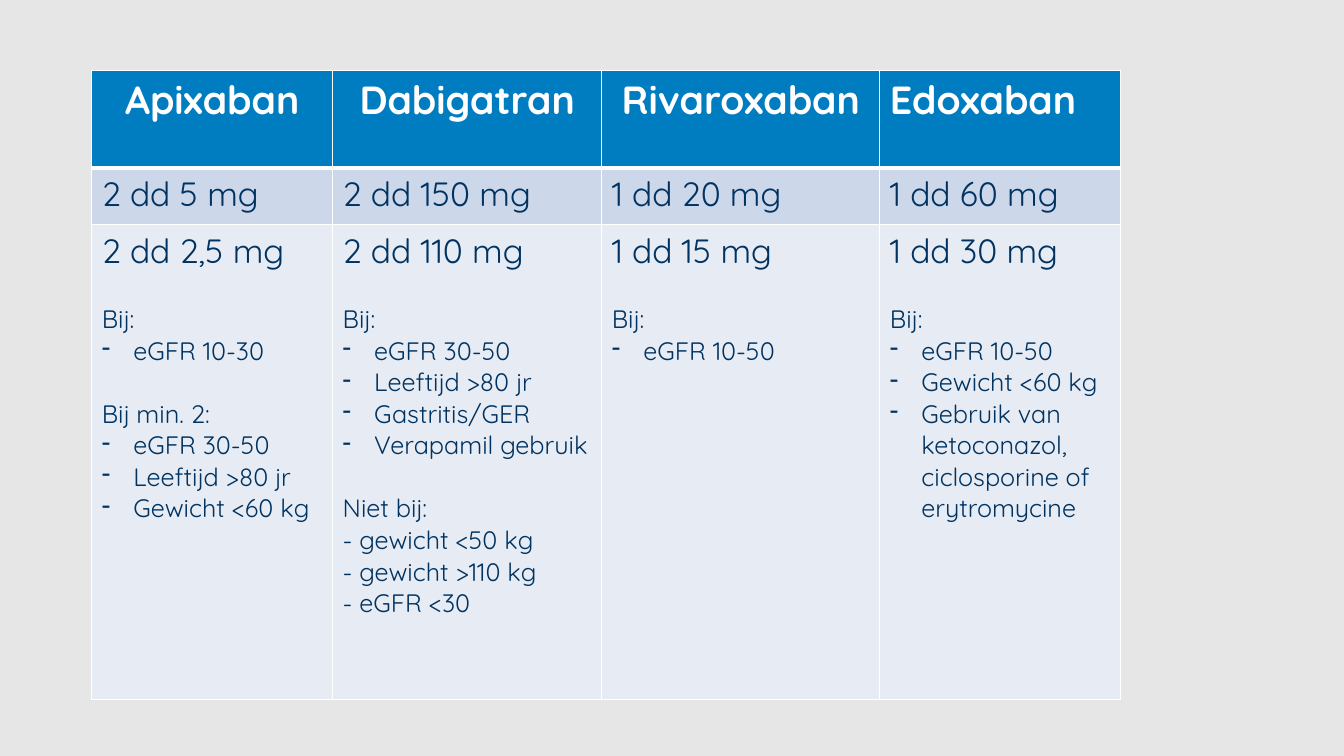
from dataclasses import dataclass

from lxml.etree import SubElement
from pptx import Presentation
from pptx.dml.color import RGBColor as Color
from pptx.enum.text import PP_ALIGN as Align
from pptx.oxml.ns import qn
from pptx.util import Pt

# name, alignment, column width, standard dose, reduced dose, (heading, bullets, plain lines)
DRUGS = [
    ("Apixaban", Align.CENTER, 172.1, "2 dd 5 mg", "2 dd 2,5 mg", [
        ("Bij:", ["eGFR 10-30"], []),
        ("Bij min. 2:", ["eGFR 30-50", "Leeftijd >80 jr", "Gewicht <60 kg"], []),
    ]),
    ("Dabigatran", Align.CENTER, 192.2, "2 dd 150 mg", "2 dd 110 mg", [
        ("Bij:", ["eGFR 30-50", "Leeftijd >80 jr", "Gastritis/GER", "Verapamil gebruik"], []),
        ("Niet bij:", [], ["- gewicht <50 kg", "- gewicht >110 kg", "- eGFR <30"]),
    ]),
    ("Rivaroxaban", Align.CENTER, 198.7, "1 dd 20 mg", "1 dd 15 mg", [
        ("Bij:", ["eGFR 10-50"], []),
    ]),
    ("Edoxaban", Align.LEFT, 172.1, "1 dd 60 mg", "1 dd 30 mg", [
        ("Bij:", ["eGFR 10-50", "Gewicht <60 kg",
                  "Gebruik van ketoconazol, ciclosporine of erytromycine"], []),
    ]),
]
ROW_HEIGHTS = [69.8, 40.3, 339.1]
TABLE_LEFT, TABLE_TOP = 65.5, 50.4


@dataclass(frozen=True)
class Theme:
    """Colours, font and sizes of the slide."""
    font: str = "Quicksand"
    background: str = "E7E6E6"
    white: str = "FFFFFF"
    text: str = "003361"
    row_fills: tuple = ("007CC1", "CCD7E9", "E7ECF4")
    name_size: float = 28
    dose_size: float = 24
    detail_size: float = 18
    group_gap: float = 22.5
    indent: float = 22.5
    thin: float = 1
    thick: float = 3


THEME = Theme()


def style_cell(cell, row):
    """Give a cell its borders and the fill of its row."""
    properties = cell._tc.get_or_add_tcPr()
    widths = {
        "a:lnL": THEME.thin,
        "a:lnR": THEME.thin,
        "a:lnT": THEME.thick if row == 1 else THEME.thin,
        "a:lnB": THEME.thick if row == 0 else THEME.thin,
    }
    for side, width in widths.items():
        line = SubElement(properties, qn(side), w=str(Pt(width)))
        fill = SubElement(line, qn("a:solidFill"))
        SubElement(fill, qn("a:srgbClr"), val=THEME.white)
    cell.fill.solid()
    cell.fill.fore_color.rgb = Color.from_string(THEME.row_fills[row])


def write(paragraph, text, size, color=THEME.text, bold=False, bullet=False):
    """Fill a paragraph with text in the theme font."""
    paragraph.text = text
    if bullet:
        properties = paragraph._p.get_or_add_pPr()
        properties.set("marL", str(Pt(THEME.indent)))
        properties.set("indent", str(-Pt(THEME.indent)))
        SubElement(properties, qn("a:buFontTx"))
        SubElement(properties, qn("a:buChar"), char="-")
    font = paragraph.font
    font.name, font.size, font.bold = THEME.font, Pt(size), bold
    font.color.rgb = Color.from_string(color)


def write_group(frame, heading, bullets, lines):
    """Add a heading and its criteria to a text frame."""
    paragraph = frame.add_paragraph()
    write(paragraph, heading, THEME.detail_size)
    paragraph.space_before = Pt(THEME.group_gap)
    for item in bullets:
        write(frame.add_paragraph(), item, THEME.detail_size, bullet=True)
    for line in lines:
        write(frame.add_paragraph(), line, THEME.detail_size)


def main():
    """Build the dosing table and save the presentation."""
    presentation = Presentation()
    presentation.slide_width, presentation.slide_height = Pt(960), Pt(540)
    slide = presentation.slides.add_slide(presentation.slide_layouts[6])
    slide.background.fill.solid()
    slide.background.fill.fore_color.rgb = Color.from_string(THEME.background)

    table_width = sum(drug[2] for drug in DRUGS)
    table = slide.shapes.add_table(
        len(ROW_HEIGHTS), len(DRUGS), Pt(TABLE_LEFT), Pt(TABLE_TOP),
        Pt(table_width), Pt(sum(ROW_HEIGHTS))).table
    for row, height in zip(table.rows, ROW_HEIGHTS):
        row.height = Pt(height)

    for column, (name, alignment, width, standard, reduced, groups) in enumerate(DRUGS):
        table.columns[column].width = Pt(width)
        cells = [table.cell(row, column) for row in range(len(ROW_HEIGHTS))]
        for row, cell in enumerate(cells):
            style_cell(cell, row)
        header, first, second = (cell.text_frame.paragraphs[0] for cell in cells)
        write(header, name, THEME.name_size, THEME.white, bold=True)
        header.alignment = alignment
        write(first, standard, THEME.dose_size)
        write(second, reduced, THEME.dose_size)
        for group in groups:
            write_group(cells[2].text_frame, *group)

    presentation.save("out.pptx")


if __name__ == "__main__":
    main()
